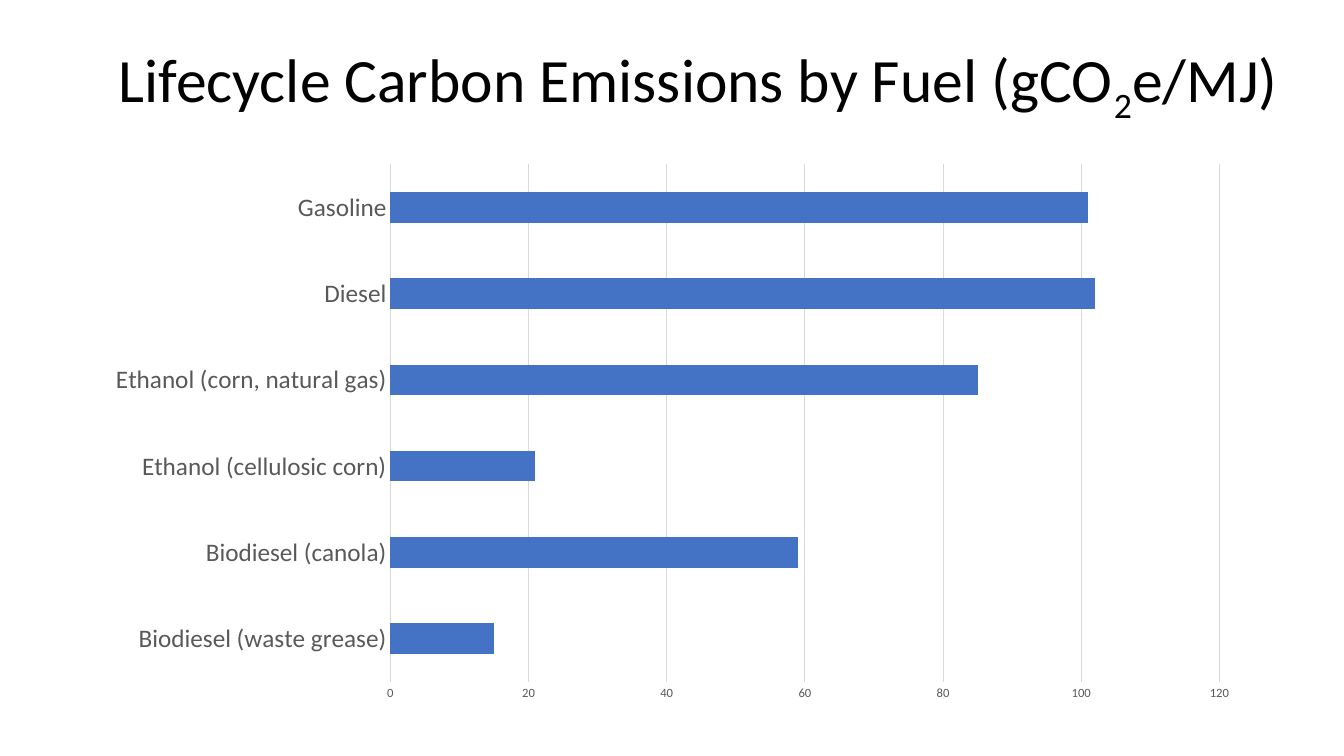
from dataclasses import dataclass

from pptx import Presentation
from pptx.chart.data import CategoryChartData
from pptx.dml.color import RGBColor
from pptx.enum.chart import XL_CHART_TYPE as ChartType, XL_TICK_MARK as TickMark
from pptx.enum.text import MSO_ANCHOR as Anchor, MSO_AUTO_SIZE as AutoSize, PP_ALIGN as Align
from pptx.util import Inches, Pt


@dataclass(frozen=True)
class Theme:
    """Colours, font and type sizes of the deck."""
    font: str = "Calibri"
    ink: str = "000000"
    label: str = "595959"
    rule: str = "D9D9D9"
    bar: str = "4472C4"
    title_size: int = 44
    fuel_size: int = 18
    chart_size: int = 10
    scale_size: int = 9
    hairline: float = 0.75


class SlideBuilder:
    """Holds the theme and current slide, placing elements by shares of its size."""

    def __init__(self, deck, theme):
        self.deck, self.theme = deck, theme
        self.slide = deck.slides.add_slide(deck.slide_layouts[5])

    def box(self, left, top, width, height):
        """Turn shares of the slide into lengths."""
        across, down = self.deck.slide_width, self.deck.slide_height
        return int(left * across), int(top * down), int(width * across), int(height * down)

    def style(self, font, size, colour):
        """Apply the theme font with a size and colour."""
        font.name, font.size = self.theme.font, Pt(size)
        font.color.rgb = RGBColor.from_string(colour)

    def rule(self, line):
        """Draw a line as a thin grey rule."""
        line.color.rgb = RGBColor.from_string(self.theme.rule)
        line.width = Pt(self.theme.hairline)

    def title(self, area, before, subscript, after):
        """Fill the title, with one part set as a subscript."""
        heading = self.slide.shapes.title
        heading.left, heading.top, heading.width, heading.height = self.box(*area)
        frame = heading.text_frame
        frame.word_wrap, frame.auto_size = True, AutoSize.NONE
        frame.vertical_anchor = Anchor.MIDDLE
        wording = frame.paragraphs[0]
        wording.alignment, wording.line_spacing = Align.LEFT, 0.9
        self.style(wording.font, self.theme.title_size, self.theme.ink)
        for part in (before, subscript, after):
            run = wording.add_run()
            run.text = part
            if part == subscript:
                run.font._element.set("baseline", "-25000")

    def bars(self, area, name, emissions, top_value, step):
        """Add a horizontal bar chart, first item at the bottom."""
        theme = self.theme
        values = CategoryChartData()
        values.categories = list(emissions)
        values.add_series(name, list(emissions.values()))
        chart = self.slide.shapes.add_chart(
            ChartType.BAR_CLUSTERED, *self.box(*area), values).chart
        chart.has_legend = chart.has_title = False
        self.style(chart.font, theme.chart_size, theme.ink)

        plot = chart.plots[0]
        plot.gap_width, plot.vary_by_categories = 182, False
        fill = plot.series[0].format.fill
        fill.solid()
        fill.fore_color.rgb = RGBColor.from_string(theme.bar)

        fuels, scale = chart.category_axis, chart.value_axis
        for axis, size in ((fuels, theme.fuel_size), (scale, theme.scale_size)):
            axis.major_tick_mark = axis.minor_tick_mark = TickMark.NONE
            self.style(axis.tick_labels.font, size, theme.label)
        self.rule(fuels.format.line)
        scale.format.line.fill.background()
        scale.minimum_scale, scale.maximum_scale, scale.major_unit = 0, top_value, step
        scale.has_major_gridlines = True
        self.rule(scale.major_gridlines.format.line)


def main():
    """Build and save the emissions slide."""
    deck = Presentation()
    deck.slide_width, deck.slide_height = Inches(13.33), Inches(7.5)
    page = SlideBuilder(deck, Theme())
    page.title((1.08 / 13.33, 0.07 / 7.5, 11.72 / 13.33, 1.45 / 7.5),
               "Lifecycle Carbon Emissions by Fuel (gCO", "2", "e/MJ)")
    page.bars((0.92 / 13.33, 1.52 / 7.5, 11.5 / 13.33, 5.54 / 7.5), "Series 1", {
        "Biodiesel (waste grease)": 15,
        "Biodiesel (canola)": 59,
        "Ethanol (cellulosic corn)": 21,
        "Ethanol (corn, natural gas)": 85,
        "Diesel": 102,
        "Gasoline": 101,
    }, 120, 20)
    deck.save("out.pptx")


if __name__ == "__main__":
    main()
